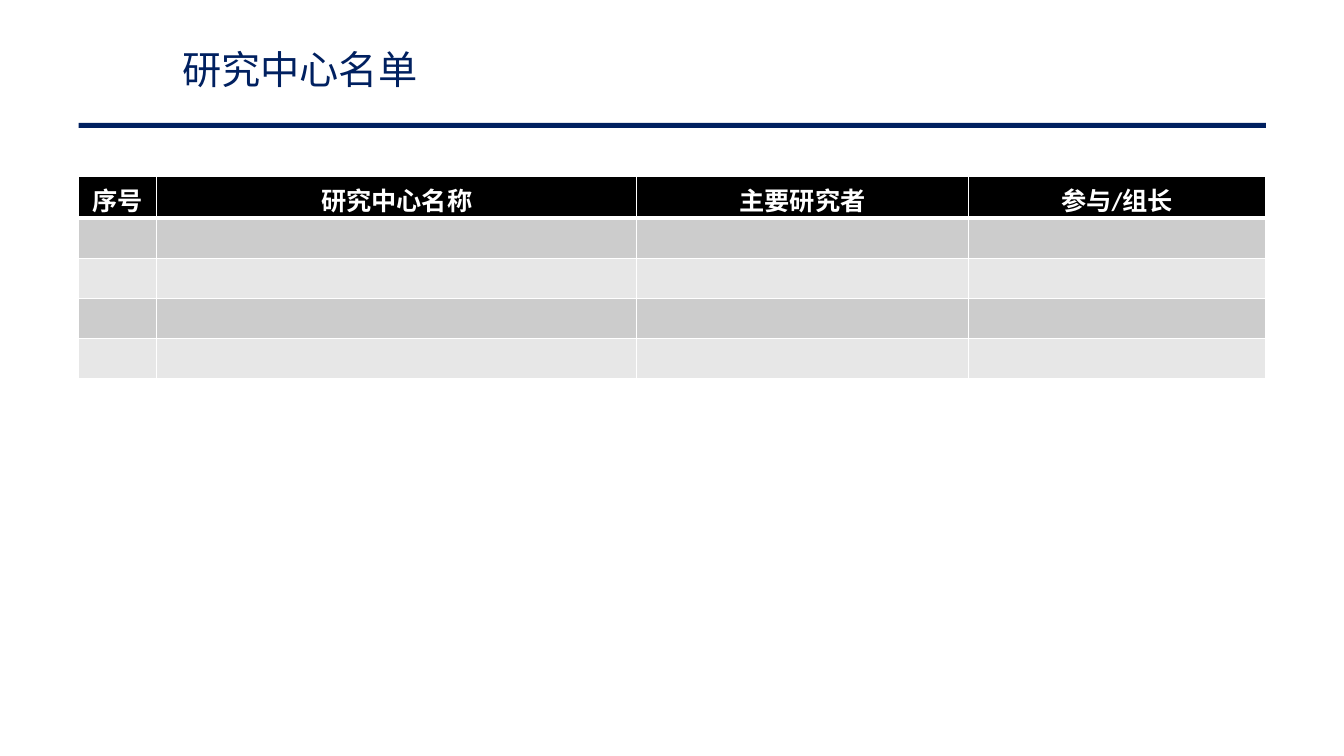
from lxml.etree import SubElement
from pptx import Presentation
from pptx.dml.color import RGBColor
from pptx.enum.shapes import MSO_SHAPE
from pptx.enum.text import MSO_ANCHOR, MSO_AUTO_SIZE, PP_ALIGN
from pptx.oxml.ns import qn
from pptx.util import Pt

NAVY = RGBColor(0x00, 0x20, 0x60)
BLACK = RGBColor(0x00, 0x00, 0x00)
WHITE = RGBColor(0xFF, 0xFF, 0xFF)
DARK_BAND = RGBColor(0xCC, 0xCC, 0xCC)
LIGHT_BAND = RGBColor(0xE7, 0xE7, 0xE7)


class SlideBuilder:
    latin_font = "Calibri"
    chinese_font = "Noto Sans CJK SC"

    def __init__(self, slide):
        self.slide = slide

    def style(self, paragraph, face, size, color, bold=False):
        font = paragraph.font
        font.name, font.size, font.bold = face, Pt(size), bold
        font.color.rgb = color
        properties = paragraph._p.pPr.find(qn("a:defRPr"))
        SubElement(properties, qn("a:ea"), typeface=self.chinese_font)

    def title(self, text, left, top, width, height):
        heading = self.slide.shapes.title
        heading.left, heading.top = Pt(left), Pt(top)
        heading.width, heading.height = Pt(width), Pt(height)
        frame = heading.text_frame
        frame.text = text
        frame.auto_size = MSO_AUTO_SIZE.NONE
        frame.vertical_anchor = MSO_ANCHOR.TOP
        line = frame.paragraphs[0]
        line.alignment = PP_ALIGN.LEFT
        line.line_spacing = Pt(19)
        self.style(line, self.chinese_font, 28, NAVY)

    def bar(self, left, top, width, height):
        rule = self.slide.shapes.add_shape(
            MSO_SHAPE.RECTANGLE, Pt(left), Pt(top), Pt(width), Pt(height))
        rule.shadow.inherit = False
        rule.fill.solid()
        rule.fill.fore_color.rgb = NAVY
        rule.line.fill.background()

    def borders(self, cell, top, bottom):
        properties = cell._tc.get_or_add_tcPr()
        for side, width in (("L", 1), ("R", 1), ("T", top), ("B", bottom)):
            line = SubElement(properties, qn(f"a:ln{side}"), w=str(Pt(width)))
            fill = SubElement(line, qn("a:solidFill"))
            SubElement(fill, qn("a:srgbClr"), val=str(WHITE))

    def table(self, headers, widths, row_count, left, top, row_height):
        centers = self.slide.shapes.add_table(
            row_count, len(headers), Pt(left), Pt(top),
            Pt(sum(widths)), Pt(row_height * row_count)).table
        for column, width in zip(centers.columns, widths):
            column.width = Pt(width)
        for index, row in enumerate(centers.rows):
            row.height = Pt(row_height)
            band = DARK_BAND if index % 2 else LIGHT_BAND
            for cell, header in zip(row.cells, headers):
                cell.margin_top, cell.margin_bottom = Pt(3.2), Pt(0)
                self.borders(cell, 3 if index == 1 else 1, 3 if index == 0 else 1)
                cell.fill.solid()
                cell.fill.fore_color.rgb = band if index else BLACK
                if index == 0:
                    cell.text = header
                line = cell.text_frame.paragraphs[0]
                line.alignment = PP_ALIGN.CENTER
                self.style(line, self.latin_font, 18,
                           BLACK if index else WHITE, bold=index == 0)


def main():
    deck = Presentation()
    deck.slide_width, deck.slide_height = Pt(960), Pt(540)
    builder = SlideBuilder(deck.slides.add_slide(deck.slide_layouts[5]))

    # Heading and rule
    builder.bar(56.16, 87.84, 848.16, 3.6)
    builder.title("研究中心名单", 123.12, 43.2, 246.96, 30.24)

    # List of research centres, left blank for filling in
    builder.table(["序号", "研究中心名称", "主要研究者", "参与/组长"],
                  [55.8, 342.72, 237.12, 212.4],
                  row_count=5, left=56.16, top=126.3, row_height=28.8)

    deck.save("out.pptx")


if __name__ == "__main__":
    main()
